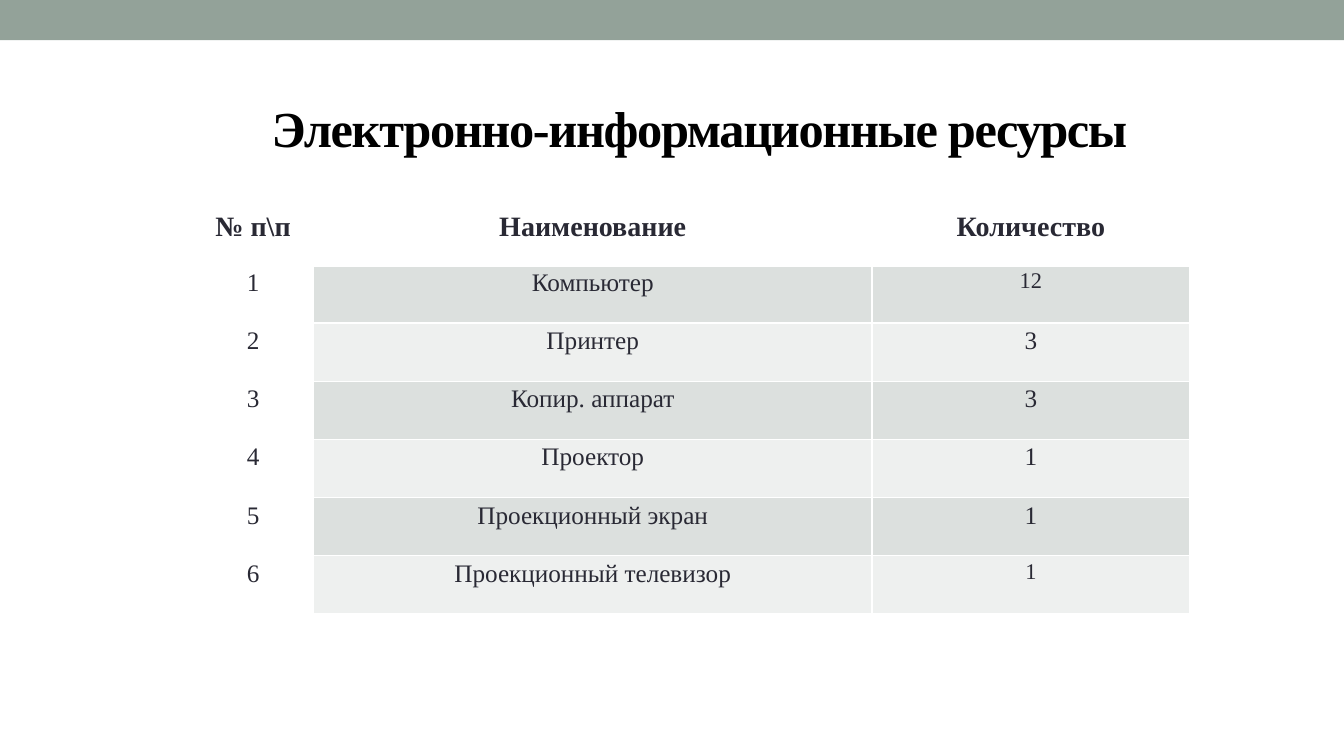
from dataclasses import dataclass

from pptx import Presentation
from pptx import util as u
from pptx.dml.color import RGBColor
from pptx.enum import shapes, text
from pptx.oxml import parse_xml
from pptx.oxml.ns import nsdecls


@dataclass(frozen=True)
class Theme:
    font: str = "Times New Roman"
    band: str = "93A299"
    title: str = "000000"
    ink: str = "292934"
    border: str = "FFFFFF"
    stripes: tuple = ("DCE0DE", "EEF0EF")
    title_size: int = 36
    header_size: int = 20
    body_size: int = 18
    small_size: int = 16


THEME = Theme()
HEADERS = ("№ п\\п", "Наименование", "Количество")
RESOURCES = (
    ("Компьютер", "12", THEME.small_size),
    ("Принтер", "3", THEME.body_size),
    ("Копир. аппарат", "3", THEME.body_size),
    ("Проектор", "1", THEME.body_size),
    ("Проекционный экран", "1", THEME.body_size),
    ("Проекционный телевизор", "1", THEME.small_size),
)


def write(frame, wording, *, size, color, bold=False, line_spacing=1.0, tracking=None):
    paragraph = frame.paragraphs[0]
    paragraph.alignment = text.PP_ALIGN.CENTER
    paragraph.line_spacing = line_spacing
    run = paragraph.add_run()
    run.text = wording
    run.font.name = THEME.font
    run.font.size = u.Pt(size)
    run.font.bold = bold
    run.font.color.rgb = RGBColor.from_string(color)
    if tracking is not None:
        run.font._element.set("spc", str(tracking * 100))


class SlideBuilder:
    def __init__(self, deck, theme):
        self.theme = theme
        self.width, self.height = deck.slide_width, deck.slide_height
        self.slide = deck.slides.add_slide(deck.slide_layouts[5])

    def across(self, percent):
        return round(self.width * percent / 100)

    def down(self, percent):
        return round(self.height * percent / 100)

    def area(self, left, top, width, height):
        return self.across(left), self.down(top), self.across(width), self.down(height)

    def band(self, *percents):
        band = self.slide.shapes.add_shape(shapes.MSO_SHAPE.RECTANGLE, *self.area(*percents))
        band.shadow.inherit = False
        band.fill.solid()
        band.fill.fore_color.rgb = RGBColor.from_string(self.theme.band)
        band.line.fill.background()

    def title(self, wording, *percents):
        heading = self.slide.shapes.title
        heading.left, heading.top, heading.width, heading.height = self.area(*percents)
        heading.text_frame.vertical_anchor = text.MSO_ANCHOR.MIDDLE
        heading.text_frame.word_wrap = True
        write(heading.text_frame, wording, size=self.theme.title_size,
              color=self.theme.title, bold=True, tracking=-1)

    def cell(self, cell, wording, *, size, bold=False, fill=None, top=1, bottom=1):
        cell.margin_left = cell.margin_right = u.Inches(0.07)
        cell.margin_top = cell.margin_bottom = 0
        cell.vertical_anchor = text.MSO_ANCHOR.TOP
        properties = cell._tc.get_or_add_tcPr()
        for side, points in (("L", 1), ("R", 1), ("T", top), ("B", bottom)):
            properties.append(parse_xml(
                f'<a:ln{side} {nsdecls("a")} w="{u.Pt(points)}"><a:solidFill>'
                f'<a:srgbClr val="{self.theme.border}"/></a:solidFill></a:ln{side}>'))
        if fill:
            cell.fill.solid()
            cell.fill.fore_color.rgb = RGBColor.from_string(fill)
        else:
            cell.fill.background()
        write(cell.text_frame, wording, size=size, color=self.theme.ink,
              bold=bold, line_spacing=1.15)

    def resource_table(self, headers, resources, left, top, widths, row_height):
        row_count = len(resources) + 1
        table = self.slide.shapes.add_table(
            row_count, len(headers),
            *self.area(left, top, sum(widths), row_height * row_count)).table
        table.first_row = table.horz_banding = False
        for column, width in zip(table.columns, widths):
            column.width = self.across(width)
        for row in table.rows:
            row.height = self.down(row_height)
        for column, header in enumerate(headers):
            self.cell(table.cell(0, column), header, size=self.theme.header_size,
                      bold=True, bottom=3)
        for number, (name, quantity, quantity_size) in enumerate(resources, 1):
            stripe = self.theme.stripes[(number - 1) % 2]
            top_border = 3 if number == 1 else 1
            entries = (
                (str(number), self.theme.body_size, None),
                (name, self.theme.body_size, stripe),
                (quantity, quantity_size, stripe),
            )
            for column, (wording, size, fill) in enumerate(entries):
                self.cell(table.cell(number, column), wording, size=size,
                          fill=fill, top=top_border)


def main():
    deck = Presentation()
    deck.slide_width, deck.slide_height = u.Inches(13.33), u.Inches(7.5)
    page = SlideBuilder(deck, THEME)
    page.band(0, 0, 100, 5.3)
    page.title("Электронно-информационные ресурсы", 10.95, 11.6, 82.2, 10.5)
    page.resource_table(HEADERS, RESOURCES, left=14.33, top=27.33,
                        widths=(9, 41.55, 23.65), row_height=7.7)
    deck.save("out.pptx")


if __name__ == "__main__":
    main()
